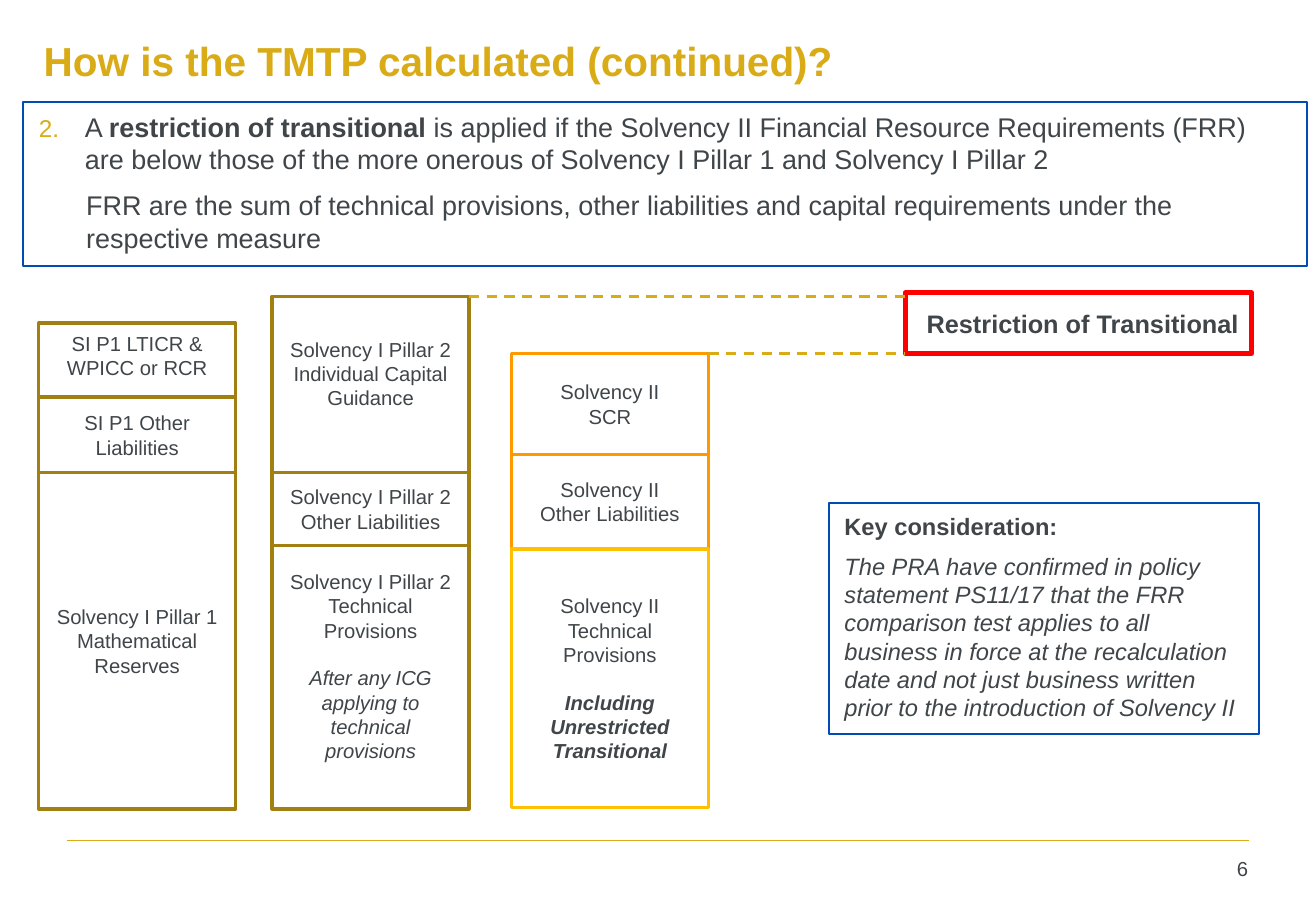
from lxml import etree
from pptx import Presentation
from pptx import util as u
from pptx.dml.color import RGBColor
from pptx.enum import dml, shapes, text
from pptx.oxml import ns

WIDTH, HEIGHT = u.Inches(10.83), u.Inches(7.5)
GOLD, BRONZE, ORANGE, AMBER = "D9AB16", "A17F10", "FF9900", "FFC000"
BLUE, RED, INK = "004CB6", "FF0000", "3F4548"
BAR_WIDTH = 14.96
PILLAR_1_X, PILLAR_2_X, SOLVENCY_2_X = 2.95, 20.68, 38.87
PILLAR_1_TOP, PILLAR_2_TOP, SOLVENCY_2_TOP = 35.47, 32.53, 38.8
RESTRICTION_X = 68.79


def across(share):
    return round(WIDTH * share / 100)


def down(share):
    return round(HEIGHT * share / 100)


def area(x, y, width, height):
    return across(x), down(y), across(width), down(height)


def color(hex_string):
    return RGBColor.from_string(hex_string)


def move(item, place):
    item.left, item.top, item.width, item.height = place


def outline(item, line_color, points):
    item.line.color.rgb = color(line_color)
    item.line.width = u.Pt(points)


def set_frame(frame, insets, anchor):
    frame.word_wrap = True
    frame.auto_size = text.MSO_AUTO_SIZE.NONE
    frame.vertical_anchor = anchor
    (frame.margin_left, frame.margin_top,
     frame.margin_right, frame.margin_bottom) = map(u.Inches, insets)
    return frame


def write(frame, words, strong="", size=12, bold=False, italic=False,
          ink=INK, align=text.PP_ALIGN.LEFT, before=0):
    paragraph = frame.paragraphs[0] if not frame.text else frame.add_paragraph()
    paragraph.alignment = align
    paragraph.space_before = u.Pt(before)
    pieces = words.partition(strong) if strong else (words,)
    for piece in filter(None, pieces):
        run = paragraph.add_run()
        run.text = piece
        font = run.font
        font.name, font.size = "Arial", u.Pt(size)
        font.bold, font.italic = bold or piece == strong, italic
        font.color.rgb = color(ink)
    return paragraph


def indent(paragraph, left, first, start=None):
    properties = paragraph._p.get_or_add_pPr()
    properties.set("marL", str(u.Inches(left)))
    properties.set("indent", str(u.Inches(first)))

    def add(parent, tag, **attributes):
        return etree.SubElement(parent, ns.qn(tag), attributes)

    if start is None:
        add(properties, "a:buNone")
    else:
        add(add(properties, "a:buClr"), "a:srgbClr", val=GOLD)
        add(properties, "a:buSzPct", val="90000")
        add(properties, "a:buAutoNum", type="arabicPeriod", startAt=str(start))


def add_box(slide, place, line_color, points, insets, anchor=text.MSO_ANCHOR.MIDDLE):
    box = slide.shapes.add_shape(shapes.MSO_SHAPE.RECTANGLE, *place)
    box.shadow.inherit = False
    box.fill.background()
    outline(box, line_color, points)
    return set_frame(box.text_frame, insets, anchor)


def add_bar(slide, x, top, layers):
    for height, line_color, lift, lines, remark in layers:
        frame = add_box(slide, area(x, top, BAR_WIDTH, height), line_color, 2,
                        (0.1, 0.05, 0.1, 0.05 + 2 * lift))
        for line in lines:
            write(frame, line, align=text.PP_ALIGN.CENTER)
        if remark:
            write(frame, remark, italic=True, bold=line_color == AMBER,
                  align=text.PP_ALIGN.CENTER, before=14)
        top += height


def add_rule(slide, start, end, y, points, dashed=False):
    rule = slide.shapes.add_connector(shapes.MSO_CONNECTOR.STRAIGHT, across(start),
                                      down(y), across(end), down(y))
    outline(rule, GOLD, points)
    if dashed:
        rule.line.dash_style = dml.MSO_LINE.DASH
    etree.SubElement(rule._element.spPr, ns.qn("a:effectLst"))


def add_heading(slide):
    title = slide.shapes.title
    move(title, area(3.32, 1.33, 79.59, 10.53))
    frame = set_frame(title.text_frame, (0, 0, 0, 0), text.MSO_ANCHOR.MIDDLE)
    write(frame, "How is the TMTP calculated (continued)?", size=24, bold=True, ink=GOLD)


def add_definition(slide):
    body = slide.placeholders[1]
    move(body, area(1.75, 11.2, 97.6, 18))
    outline(body, BLUE, 1.25)
    frame = set_frame(body.text_frame, (0.13, 0.07, 0.13, 0.07), text.MSO_ANCHOR.TOP)
    rule = write(frame, "A restriction of transitional is applied if the Solvency II Financial "
                 "Resource Requirements (FRR) are below those of the more onerous of "
                 "Solvency I Pillar 1 and Solvency I Pillar 2",
                 strong="restriction of transitional ", size=16)
    indent(rule, 0.38, -0.38, start=2)
    meaning = write(frame, "FRR are the sum of technical provisions, other liabilities and "
                    "capital requirements under the respective measure", size=16, before=8)
    indent(meaning, 0.39, 0)


def add_comparison(slide):
    add_bar(slide, PILLAR_1_X, PILLAR_1_TOP, [
        (8.13, BRONZE, 0.04, ["SI P1 LTICR & WPICC or RCR"], ""),
        (8.27, BRONZE, 0, ["SI P1 Other Liabilities"], ""),
        (36.93, BRONZE, 0, ["Solvency I Pillar 1 Mathematical Reserves"], "")])
    add_bar(slide, PILLAR_2_X, PILLAR_2_TOP, [
        (19.33, BRONZE, 0.09, ["Solvency I Pillar 2 Individual Capital Guidance"], ""),
        (8, BRONZE, 0, ["Solvency I Pillar 2 Other Liabilities"], ""),
        (28.93, BRONZE, 0.09, ["Solvency I Pillar 2 Technical Provisions"],
         "After any ICG applying to technical provisions")])
    add_bar(slide, SOLVENCY_2_X, SOLVENCY_2_TOP, [
        (11.07, ORANGE, 0, ["Solvency II", "SCR"], ""),
        (10.4, ORANGE, 0, ["Solvency II", "Other Liabilities"], ""),
        (28.4, AMBER, 0, ["Solvency II Technical Provisions"],
         "Including Unrestricted Transitional")])
    restriction = add_box(slide, area(RESTRICTION_X, 32.13, 26.32, 6.67), RED, 3,
                          (0.14, 0.05, 0.07, 0.05))
    write(restriction, "Restriction of Transitional", size=15, bold=True,
          align=text.PP_ALIGN.CENTER)
    for x, top in ((PILLAR_2_X, PILLAR_2_TOP), (SOLVENCY_2_X, SOLVENCY_2_TOP)):
        add_rule(slide, x + BAR_WIDTH, RESTRICTION_X, top, 1.5, dashed=True)


def add_consideration(slide):
    frame = add_box(slide, area(62.97, 55.2, 32.69, 25.33), BLUE, 1.25,
                    (0.13, 0.07, 0.13, 0.07), text.MSO_ANCHOR.TOP)
    write(frame, "Key consideration:", size=14, bold=True)
    write(frame, "The PRA have confirmed in policy statement PS11/17 that the FRR comparison "
          "test applies to all business in force at the recalculation date and not just "
          "business written prior to the introduction of Solvency II",
          size=14, italic=True, before=7)


def add_footer(slide):
    add_rule(slide, 5.08, 94.92, 92.27, 1)
    number = slide.shapes.add_textbox(*area(88.64, 93.33, 7.11, 4.93))
    frame = set_frame(number.text_frame, (0.1, 0.05, 0.1, 0.05), text.MSO_ANCHOR.TOP)
    write(frame, "6", align=text.PP_ALIGN.RIGHT)


def main():
    deck = Presentation()
    deck.slide_width, deck.slide_height = WIDTH, HEIGHT
    slide = deck.slides.add_slide(deck.slide_layouts[1])
    add_heading(slide)
    add_definition(slide)
    add_comparison(slide)
    add_consideration(slide)
    add_footer(slide)
    deck.save("out.pptx")


if __name__ == "__main__":
    main()
